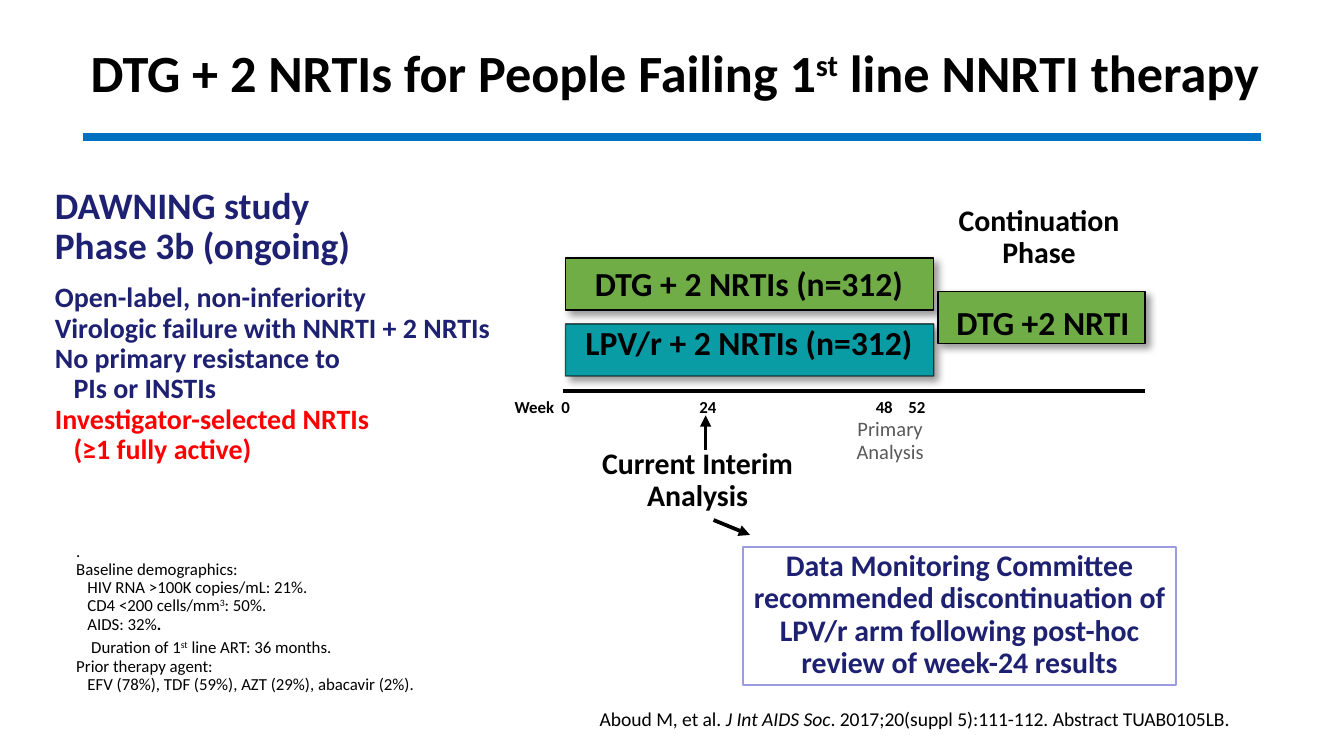
from lxml import etree
from pptx import Presentation
from pptx.dml.color import RGBColor
from pptx.enum.shapes import MSO_CONNECTOR, MSO_SHAPE
from pptx.enum.text import MSO_ANCHOR, MSO_AUTO_SIZE, PP_ALIGN
from pptx.oxml.ns import qn
from pptx.util import Pt

LINE, RECT = MSO_CONNECTOR.STRAIGHT, MSO_SHAPE.RECTANGLE
TOP, BASE = MSO_ANCHOR.TOP, MSO_ANCHOR.BOTTOM
LEFT, MID, RIGHT = PP_ALIGN.LEFT, PP_ALIGN.CENTER, PP_ALIGN.RIGHT
BLACK = RGBColor(0x00, 0x00, 0x00)
GREY = RGBColor(0x59, 0x59, 0x59)
NAVY = RGBColor(0x1E, 0x21, 0x71)
RED = RGBColor(0xFF, 0x00, 0x00)
BLUE = RGBColor(0x00, 0x70, 0xC0)
GREEN = RGBColor(0x70, 0xAD, 0x47)
TEAL = RGBColor(0x0A, 0x9C, 0xA5)
LILAC = RGBColor(0x9C, 0x9C, 0xDF)

# Content: a paragraph is a list of (text, run format) plus its own format
BOLD, ITAL, SUP = {"bold": True}, {"italic": True}, {"sup": True}
BIG, BODY = {"size": Pt(20)}, {"size": Pt(15)}
ALERT = {"size": Pt(15), "color": RED}
TITLE = [([("DTG + 2 NRTIs for People Failing 1", {}), ("st", SUP),
           (" line NNRTI therapy", {})], {})]
CITE = [([("Aboud M, et al. ", {}), ("J Int AIDS Soc", ITAL),
          (". 2017;20(suppl 5):111-112. Abstract TUAB0105LB.", {})], {})]
STUDY = [
    ([("DAWNING study", BIG)], {}),
    ([("Phase 3b (ongoing)", BIG)], {}),
    ([("Open-label, non-inferiority", BODY)], {"before": 8.8}),
    ([("Virologic failure with NNRTI + 2 NRTIs", BODY)], {}),
    ([("No primary resistance to", BODY)], {}),
    ([("PIs or INSTIs", BODY)], {"indent": 10}),
    ([("Investigator-selected NRTIs", ALERT)], {}),
    ([("(≥1 fully active)", ALERT)], {"indent": 10}),
]
SUB = {"indent": 6}
PATIENTS = [
    ([(".", {})], {}),
    ([("Baseline demographics:", {})], {}),
    ([("HIV RNA >100K copies/mL: 21%.", {})], SUB),
    ([("CD4 <200 cells/mm", {}), ("3", SUP), (": 50%.", {})], SUB),
    ([("AIDS: 32%", {}), (".", BOLD)], SUB),
    ([("Duration of 1", {}), ("st", SUP), (" line ART: 36 months.", {})],
     {"indent": 8, "before": 3}),
    ([("Prior therapy agent:", {})], {}),
    ([("EFV (78%), TDF (59%), AZT (29%), abacavir (2%).", {})], SUB),
]
WEEKS = [([("Week\t0\t24\t48\t52", {})], {"tabs": (25, 99, 193.5, 211)})]
BOARD = ("Data Monitoring Committee recommended discontinuation of "
         "LPV/r arm following post-hoc review of week-24 results")

# Arms: bar box, fill, line opacity, label, label box
ARMS = [
    ((303, 138.2, 197.3, 28), GREEN, 100,
     "DTG + 2 NRTIs (n=312)", (303, 139.7, 196.6, 26.6)),
    ((303, 173.5, 197.3, 28), TEAL, 65,
     "LPV/r + 2 NRTIs (n=312)", (303, 171.4, 196.6, 26.6)),
    ((502.6, 156.2, 110.9, 28), GREEN, 100,
     "DTG +2 NRTI", (486, 160.6, 145.4, 26.6)),
]
# Lines: start, end, colour, width, arrowhead
LINES = [
    ((44.6, 73.4), (675.4, 73.4), BLUE, 4.5, False),
    ((301.7, 209.5), (613.4, 209.5), BLACK, 2, False),
    ((378, 241.2), (378, 222.5), BLACK, 2, True),
    ((382.3, 278.6), (401.8, 286.6), BLACK, 2, True),
]


def plain(*rows):
    return [([(row, {})], {}) for row in rows]


def node(up, tag, **attrs):
    item = etree.SubElement(up, qn(tag))
    for key, val in attrs.items():
        item.set(key, str(val))
    return item


def write(shape, paras, size, color=BLACK, bold=False, align=LEFT,
          anchor=TOP, wrap=True, inset=None):
    frame = shape.text_frame
    look = {"auto_size": MSO_AUTO_SIZE.NONE, "word_wrap": wrap,
            "vertical_anchor": anchor}
    if inset is not None:
        for side in ("left", "right", "top", "bottom"):
            look["margin_" + side] = Pt(inset)
    for key, val in look.items():
        setattr(frame, key, val)
    for i, (runs, form) in enumerate(paras):
        para = frame.add_paragraph() if i else frame.paragraphs[0]
        rules = {"alignment": align, "line_spacing": 0.9,
                 "space_before": Pt(form.get("before", 0))}
        for key, val in rules.items():
            setattr(para, key, val)
        props = para._p.get_or_add_pPr()
        if "indent" in form:
            props.set("marL", str(Pt(form["indent"])))
        if "tabs" in form:
            stops = node(props, "a:tabLst")
            for pos in form["tabs"]:
                node(stops, "a:tab", pos=Pt(pos), algn="l")
        for text, own in runs:
            run = para.add_run()
            run.text = text
            style = {"name": "Calibri", "size": Pt(size), "bold": bold,
                     "color": color, **own}
            run.font.color.rgb = style.pop("color")
            if style.pop("sup", False):
                run._r.get_or_add_rPr().set("baseline", "30000")
            for key, val in style.items():
                setattr(run.font, key, val)


def label(box, paras, size, **form):
    write(slide.shapes.add_textbox(*map(Pt, box)), paras, size, **form)


def block(box, fill, color, width):
    shape = slide.shapes.add_shape(RECT, *map(Pt, box))
    shape.shadow.inherit = False
    if fill is None:
        shape.fill.background()
    else:
        shape.fill.solid()
        shape.fill.fore_color.rgb = fill
    shape.line.color.rgb = color
    shape.line.width = Pt(width)
    return shape


def shade(shape):
    effects = shape._element.spPr.find(qn("a:effectLst"))
    drop = node(effects, "a:outerShdw", blurRad=Pt(4), dist=Pt(3),
                dir=45 * 60000, algn="tl", rotWithShape=0)
    node(node(drop, "a:srgbClr", val=BLACK), "a:alpha", val=40000)


deck = Presentation()
deck.slide_width, deck.slide_height = Pt(720), Pt(405)
slide = deck.slides.add_slide(deck.slide_layouts[5])

# Title
title = slide.shapes.title
for key, val in zip(("left", "top", "width", "height"),
                    (36, 9.4, 650.9, 49.7)):
    setattr(title, key, Pt(val))
write(title, TITLE, 28, bold=True, align=MID, anchor=BASE)

# Study facts and citation
label((275.8, 376.6, 390.2, 18.7), CITE, 10.5, align=RIGHT)
label((22.3, 96.5, 270, 236.2), STUDY, 15, color=NAVY, bold=True)
label((33.8, 287.3, 249, 89.3), PATIENTS, 9)

# Study arms
for box, fill, alpha, text, spot in ARMS:
    bar = block(box, fill, BLACK, 0.75)
    shade(bar)
    if alpha < 100:
        ink = bar.line._ln.find(".//" + qn("a:srgbClr"))
        node(ink, "a:alpha", val=alpha * 1000)
    label(spot, plain(text), 18, bold=True, align=MID)

# Timeline notes
label((268.6, 210.2, 385.9, 17.3), WEEKS, 9, bold=True)
label((288, 236.9, 171.4, 42.5), plain("Current Interim", "Analysis"), 16,
      bold=True, align=MID)
label((451.4, 221, 51, 31), plain("Primary", "Analysis"), 11, color=GREY,
      align=MID, wrap=False)
label((499.7, 106.6, 113.8, 42.5), plain("Continuation Phase"), 16,
      bold=True, align=MID)

# Committee decision
write(block((398.2, 293, 231.8, 74.2), None, LILAC, 1), plain(BOARD), 16,
      color=NAVY, bold=True, align=MID, inset=2.2)

# Rule, axis and arrows
for start, end, color, width, arrow in LINES:
    link = slide.shapes.add_connector(LINE, *map(Pt, start + end))
    link.line.color.rgb = color
    link.line.width = Pt(width)
    if arrow:
        node(link.line._ln, "a:tailEnd", type="triangle")
    node(link._element.spPr, "a:effectLst")

deck.save("out.pptx")
